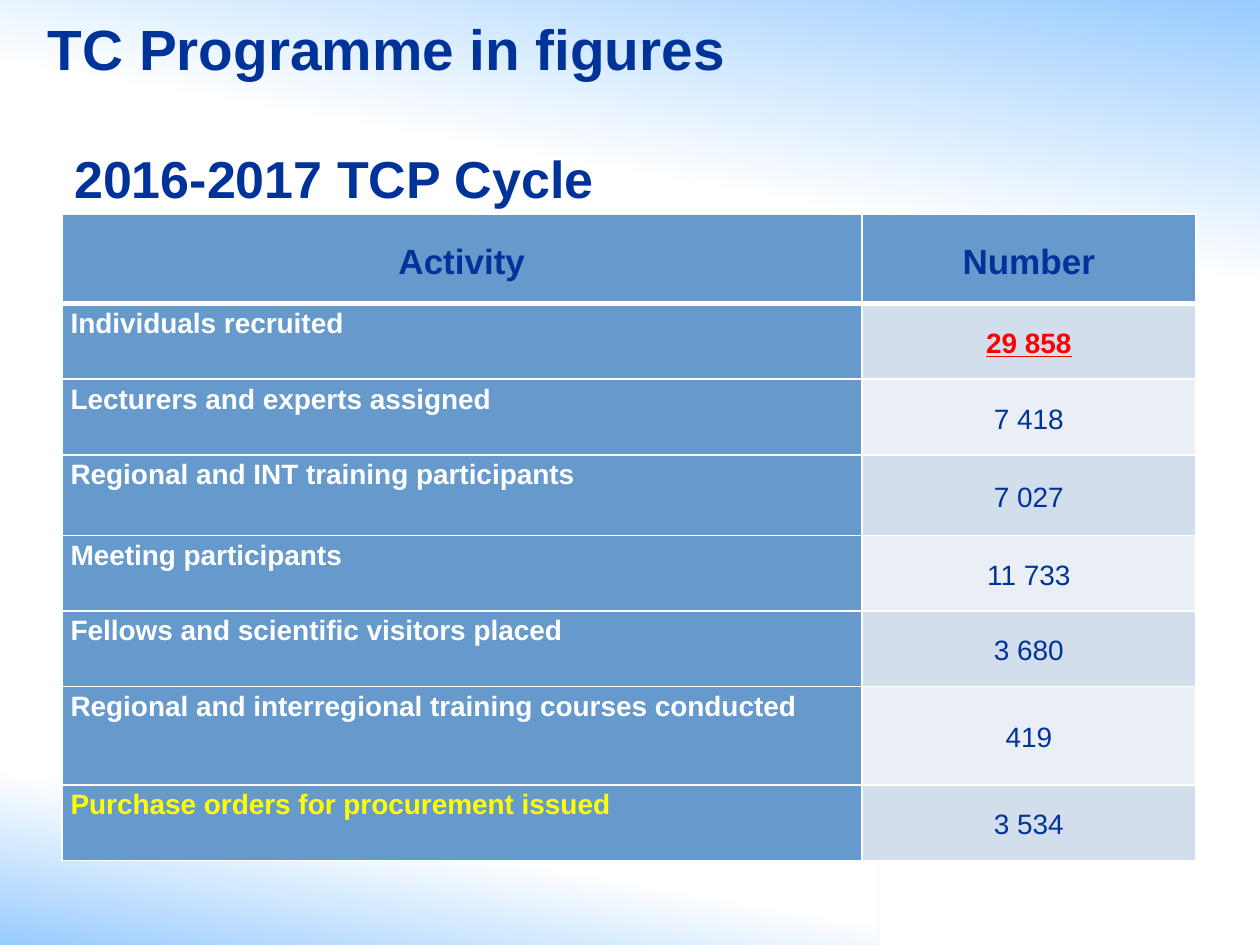
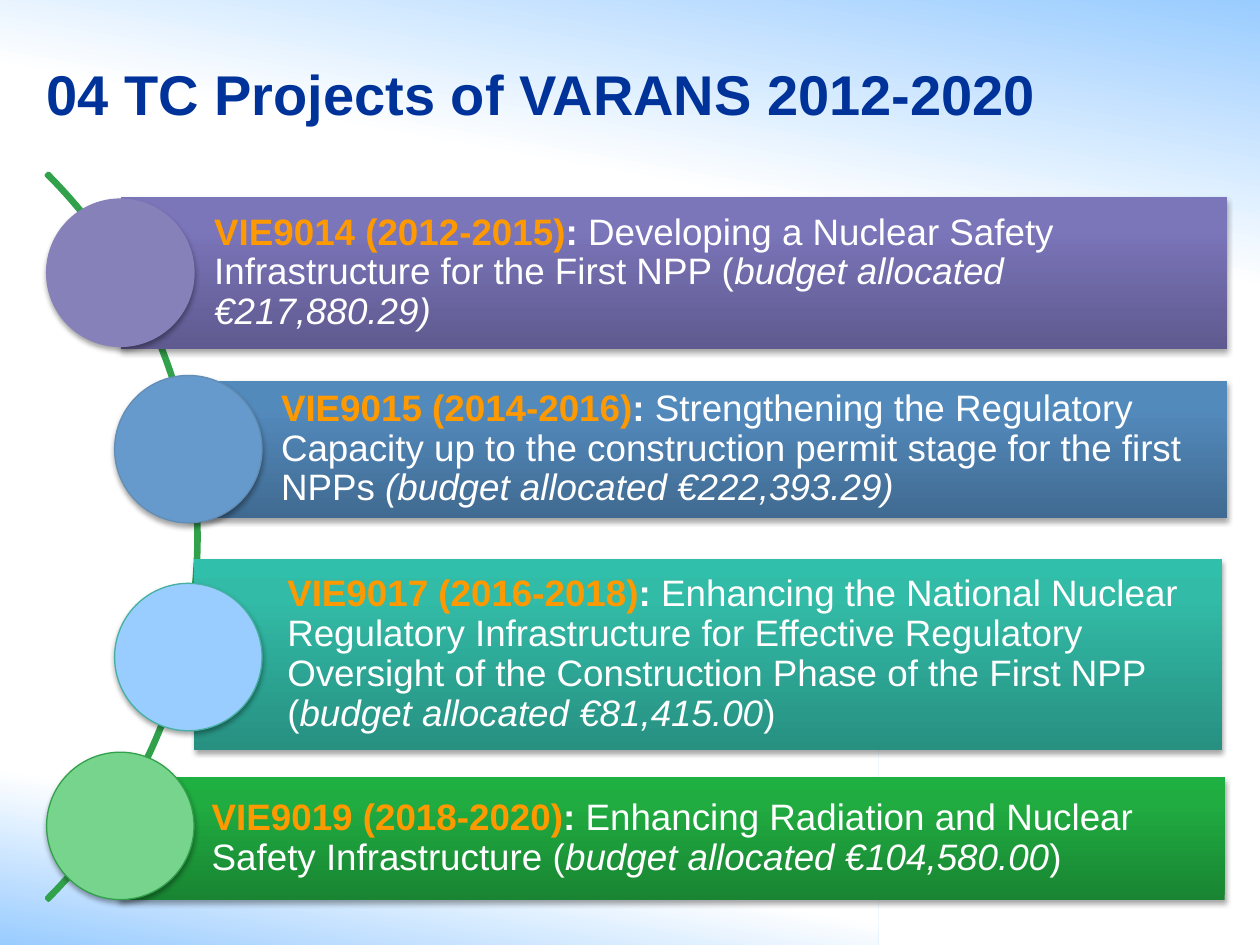
from dataclasses import dataclass

from lxml import etree
from pptx import Presentation
from pptx.dml.color import RGBColor
from pptx.enum import shapes, text
from pptx.oxml.ns import qn
from pptx.util import Inches, Pt


@dataclass(frozen=True)
class Theme:
    font: str = "Arial"
    navy: str = "003399"
    sky: str = "99CCFF"
    steel: str = "6699CC"
    white: str = "FFFFFF"
    red: str = "FF0000"
    yellow: str = "FFFF00"
    orange: str = "FF9900"
    green: str = "32A14C"
    stripes: tuple = ("D3DEEC", "EAEFF6")
    title: float = 32
    subtitle: float = 29.7
    header: float = 20
    cell: float = 16
    project: float = 21


T = Theme()

ACTIVITIES = [
    ("Individuals recruited", "29 858", 0.6),
    ("Lecturers and experts assigned", "7 418", 0.6),
    ("Regional and INT training participants", "7 027", 0.64),
    ("Meeting participants", "11 733", 0.6),
    ("Fellows and scientific visitors placed", "3 680", 0.6),
    ("Regional and interregional training courses conducted", "419", 0.78),
    ("Purchase orders for procurement issued", "3 534", 0.6),
]

PROJECTS = [
    dict(bar=(0.96, 1.56, 8.78, 1.21), shades=("5F5A8F", "7B75BA", "7B74BC"),
         centre=(0.955, 2.165), disc="8681B8", rim="8681B8",
         label="VIE9014 (2012-2015)",
         goal="Developing a Nuclear Safety Infrastructure for the First NPP (",
         budget="budget allocated €217,880.29)", tail=""),
    dict(bar=(1.49, 3.02, 8.25, 1.09), shades=("406A91", "538ABC", "518BBF"),
         centre=(1.495, 3.565), disc=T.steel, rim="628EB5",
         label="VIE9015 (2014-2016)",
         goal="Strengthening the Regulatory Capacity up to the construction "
              "permit stage for the first NPPs ",
         budget="(budget allocated €222,393.29)", tail=""),
    dict(bar=(1.54, 4.44, 8.16, 1.51), shades=("279081", "32BBA7", "30BFAA"),
         centre=(1.495, 5.215), disc=T.sky, rim="44B1A1",
         label="VIE9017 (2016-2018)",
         goal="Enhancing the National Nuclear Regulatory Infrastructure for "
              "Effective Regulatory Oversight of the Construction Phase of "
              "the First NPP (",
         budget="budget allocated €81,415.00", tail=")"),
    dict(bar=(0.94, 6.17, 8.78, 0.97), shades=("198532", "20AC41", "1EB040"),
         centre=(0.955, 6.555), disc="76D48C", rim=T.green,
         label="VIE9019 (2018-2020)",
         goal="Enhancing Radiation and Nuclear Safety Infrastructure (",
         budget="budget allocated €104,580.00", tail=")"),
]


def rgb(value):
    return RGBColor.from_string(value)


def inches(*lengths):
    return [Inches(v) for v in lengths]


def apply(obj, **values):
    for name, value in values.items():
        setattr(obj, name, value)


def node(parent, tag, **attrs):
    return etree.SubElement(parent, qn(tag), {k: str(v) for k, v in attrs.items()})


def add_run(p, words, size, color, **style):
    r = p.add_run()
    r.text = words
    apply(r.font, name=T.font, size=Pt(size), **style)
    r.font.color.rgb = rgb(color)


def add_shape(slide, kind, box, fill=None, line=None, width=0.75):
    sp = slide.shapes.add_shape(kind, *inches(*box))
    sp.shadow.inherit = False
    if fill:
        sp.fill.solid()
        sp.fill.fore_color.rgb = rgb(fill)
    if line:
        sp.line.color.rgb = rgb(line)
        sp.line.width = Pt(width)
    else:
        sp.line.fill.background()
    return sp


def fill_gradient(sp, stops, angle):
    """Linear gradient; stops are (percent, colour), angle runs clockwise."""
    grad = etree.Element(qn("a:gradFill"), rotWithShape="1")
    gs_list = node(grad, "a:gsLst")
    for pos, color in stops:
        node(node(gs_list, "a:gs", pos=pos * 1000), "a:srgbClr", val=color)
    node(grad, "a:lin", ang=angle * 60000, scaled=0)
    sp.element.spPr.find(qn("a:prstGeom")).addnext(grad)


def drop_shadow(sp):
    effects = sp.element.spPr.find(qn("a:effectLst"))
    shadow = node(effects, "a:outerShdw", blurRad=Pt(3.1), dist=Pt(1.8),
                  dir=90 * 60000, rotWithShape=0)
    node(node(shadow, "a:srgbClr", val="000000"), "a:alpha", val=35000)


def add_master_bands(prs, slide):
    """Draw the two gradient bands and move them behind the master's parts."""
    tree = prs.slide_master.shapes.element
    bands = [((0, 5.8, 6.97, 1.7), 48, 280), ((0, 0, 10, 2.33), 56, 100)]
    for i, (box, fade, angle) in enumerate(bands):
        sp = add_shape(slide, shapes.MSO_SHAPE.RECTANGLE, box)
        fill_gradient(sp, [(0, T.sky), (fade, T.white)], angle)
        tree.insert(2 + i, sp.element)


def write_heading(sp, box, words, size, anchor):
    apply(sp, **dict(zip(("left", "top", "width", "height"), inches(*box))))
    tf = sp.text_frame
    apply(tf, word_wrap=True, auto_size=text.MSO_AUTO_SIZE.NONE,
          vertical_anchor=anchor)
    if anchor == text.MSO_ANCHOR.TOP:
        tf.margin_top = 0
    p = tf.paragraphs[0]
    p.alignment = text.PP_ALIGN.LEFT
    add_run(p, words, size, T.navy, bold=True)


def set_borders(cell, top, bottom):
    tc_pr = cell._tc.get_or_add_tcPr()
    for side, width in (("L", 1), ("R", 1), ("T", top), ("B", bottom)):
        ln = node(tc_pr, f"a:ln{side}", w=Pt(width))
        node(node(ln, "a:solidFill"), "a:srgbClr", val=T.white)


def write_cell(cell, words, fill, size, color, align, anchor, **style):
    apply(cell, margin_left=Inches(0.07), margin_right=Inches(0.07),
          margin_top=0, margin_bottom=0, vertical_anchor=anchor)
    cell.fill.solid()
    cell.fill.fore_color.rgb = rgb(fill)
    p = cell.text_frame.paragraphs[0]
    apply(p, alignment=align, line_spacing=1.15)
    add_run(p, words, size, color, **style)


def add_activity_table(slide, left, top):
    widths = inches(6.35, 2.65)
    heights = inches(0.71, *(row[2] for row in ACTIVITIES))
    table = slide.shapes.add_table(len(heights), 2, *inches(left, top),
                                   sum(widths), sum(heights)).table
    table.horz_banding = False
    for col, width in zip(table.columns, widths):
        col.width = width
    for i, (row, height) in enumerate(zip(table.rows, heights)):
        row.height = height
        for cell in row.cells:
            set_borders(cell, 3 if i == 1 else 1, 3 if i == 0 else 1)

    centre, left_align = text.PP_ALIGN.CENTER, text.PP_ALIGN.LEFT
    middle, upper = text.MSO_ANCHOR.MIDDLE, text.MSO_ANCHOR.TOP
    for c, words in enumerate(("Activity", "Number")):
        write_cell(table.cell(0, c), words, T.steel, T.header, T.navy,
                   centre, middle, bold=True)
    last = len(ACTIVITIES)
    for i, (activity, number, _) in enumerate(ACTIVITIES, 1):
        key = i == 1
        write_cell(table.cell(i, 0), activity, T.steel, T.cell,
                   T.yellow if i == last else T.white,
                   left_align, upper, bold=True)
        write_cell(table.cell(i, 1), number, T.stripes[(i - 1) % 2], T.cell,
                   T.red if key else T.navy, centre, middle,
                   bold=key, underline=key)


def add_project(slide, project):
    """One gradient bar with its text, and the disc over its left end."""
    bar = add_shape(slide, shapes.MSO_SHAPE.RECTANGLE, project["bar"])
    fill_gradient(bar, zip((0, 80, 100), project["shades"]), 270)
    drop_shadow(bar)
    tf = bar.text_frame
    pad = Inches(0.06)
    apply(tf, word_wrap=True, vertical_anchor=text.MSO_ANCHOR.MIDDLE,
          margin_left=Inches(0.74), margin_right=pad, margin_top=pad,
          margin_bottom=pad)
    p = tf.paragraphs[0]
    apply(p, alignment=text.PP_ALIGN.LEFT, line_spacing=0.9)
    runs = [(project["label"], T.orange, dict(bold=True)),
            (": ", T.white, dict(bold=True)),
            (project["goal"], T.white, {}),
            (project["budget"], T.white, dict(italic=True)),
            (project["tail"], T.white, {})]
    for words, color, style in runs:
        if words:
            add_run(p, words, T.project, color, **style)

    size = 1.17
    x, y = project["centre"]
    disc = add_shape(slide, shapes.MSO_SHAPE.OVAL,
                     (x - size / 2, y - size / 2, size, size),
                     project["disc"], project["rim"])
    drop_shadow(disc)


def fill_figures_slide(slide):
    top = text.MSO_ANCHOR.TOP
    write_heading(slide.shapes.title, (0.28, 0.11, 6.69, 0.94),
                  "TC Programme in figures", T.title + 0.4, top)
    add_activity_table(slide, 0.49, 1.7)
    box = (0.49, 1.16, 6.69, 0.94)
    write_heading(slide.shapes.add_textbox(*inches(*box)), box,
                  "2016-2017 TCP Cycle", T.subtitle, top)


def fill_projects_slide(slide):
    write_heading(slide.shapes.title, (0.27, 0.27, 9.53, 0.94),
                  "04 TC Projects of VARANS 2012-2020", T.title,
                  text.MSO_ANCHOR.MIDDLE)
    arc = add_shape(slide, shapes.MSO_SHAPE.BLOCK_ARC,
                    (-6.58, 0.18, 8.16, 8.16), T.green, T.green, 2)
    for i, value in enumerate((189, 27, 0.003)):
        arc.adjustments[i] = value
    for project in PROJECTS:
        add_project(slide, project)


def main():
    prs = Presentation()
    apply(prs, slide_width=Inches(10), slide_height=Inches(7.5))
    title_only = prs.slide_layouts[5]
    figures, projects = (prs.slides.add_slide(title_only) for _ in range(2))
    add_master_bands(prs, figures)
    fill_figures_slide(figures)
    fill_projects_slide(projects)
    prs.save("out.pptx")


if __name__ == "__main__":
    main()
